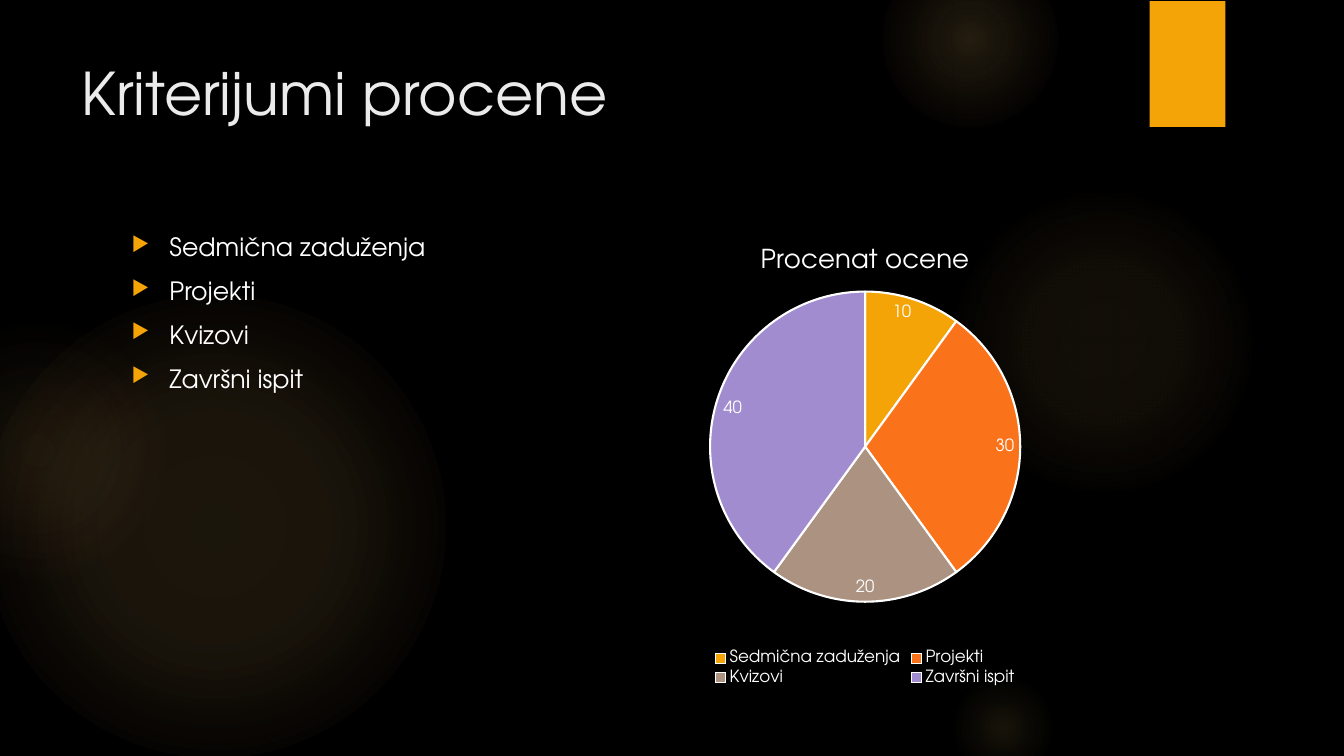
from lxml import etree
from pptx import Presentation
from pptx.chart.data import CategoryChartData
from pptx.dml.color import RGBColor
from pptx.enum.chart import XL_CHART_TYPE, XL_LABEL_POSITION, XL_LEGEND_POSITION
from pptx.enum.shapes import MSO_SHAPE
from pptx.oxml import parse_xml
from pptx.oxml.ns import nsdecls, qn
from pptx.util import Pt

PX = 9525  # 96 px to the inch
FONT = "TeX Gyre Adventor"
BLACK = RGBColor(0x00, 0x00, 0x00)
WHITE = RGBColor(0xFF, 0xFF, 0xFF)
PALE = RGBColor(0xEB, 0xEB, 0xEB)
AMBER = RGBColor(0xF5, 0xA4, 0x08)
ORANGE = RGBColor(0xFA, 0x73, 0x1A)
TAUPE = RGBColor(0xAB, 0x92, 0x81)
VIOLET = RGBColor(0xA1, 0x8C, 0xD0)
GLOW = RGBColor(0xFA, 0xC9, 0x6A)
GLOW_PINK = RGBColor(0xF5, 0x9B, 0x74)


def style(font, size, color=WHITE):
    font.name = FONT
    font.size = Pt(size)
    font.bold = False
    font.color.rgb = color


def add_text_frame(left, top, width, height):
    frame = slide.shapes.add_textbox(left * PX, top * PX, width * PX, height * PX).text_frame
    frame.word_wrap = True
    return frame


prs = Presentation()
prs.slide_width, prs.slide_height = 1280 * PX, 720 * PX
slide = prs.slides.add_slide(prs.slide_layouts[6])
slide.background.fill.solid()
slide.background.fill.fore_color.rgb = BLACK

# Soft glows: left, top, diameter, then (position %, colour, opacity %) from the centre out
glows = [
    (-16, 281, 440, [(0, GLOW, 11), (36, GLOW, 10), (75, GLOW, 0)]),
    (-88, 305, 248, [(0, GLOW, 8), (36, GLOW, 5), (71, GLOW_PINK, 0)]),
    (903, 178, 296, [(0, GLOW, 7), (36, GLOW, 6), (69, GLOW, 0)]),
    (840, -47, 168, [(0, GLOW, 14), (36, GLOW, 7), (73, GLOW, 0)]),
    (903, 641, 104, [(0, GLOW, 10), (31, GLOW, 5), (66, GLOW, 0)]),
]
for left, top, diameter, stops in glows:
    glow = slide.shapes.add_shape(
        MSO_SHAPE.OVAL, left * PX, top * PX, diameter * PX, diameter * PX)
    glow.shadow.inherit = False
    glow.line.fill.background()
    stop_xml = "".join(
        f'<a:gs pos="{pos * 1000}"><a:srgbClr val="{color}">'
        f'<a:alpha val="{opacity * 1000}"/></a:srgbClr></a:gs>'
        for pos, color, opacity in stops)
    gradient = parse_xml(
        f'<a:gradFill {nsdecls("a")} rotWithShape="1"><a:gsLst>{stop_xml}</a:gsLst>'
        '<a:path path="circle"><a:fillToRect l="50000" t="50000" r="50000" b="50000"/>'
        '</a:path></a:gradFill>')
    glow.element.spPr.find(qn("a:prstGeom")).addnext(gradient)

ribbon = slide.shapes.add_shape(MSO_SHAPE.RECTANGLE, 1095 * PX, 1 * PX, 72 * PX, 120 * PX)
ribbon.shadow.inherit = False
ribbon.fill.solid()
ribbon.fill.fore_color.rgb = AMBER
ribbon.line.fill.background()

title = add_text_frame(68, 49, 988, 147).paragraphs[0]
title.text = "Kriterijumi procene"
style(title.font, 42, PALE)

# Criteria: name, share of the grade, slice colour
criteria = [
    ("Sedmična zaduženja", 10, AMBER),
    ("Projekti", 30, ORANGE),
    ("Kvizovi", 20, TAUPE),
    ("Završni ispit", 40, VIOLET),
]
criteria_list = add_text_frame(116, 216, 462, 441)
for i, (name, _, _) in enumerate(criteria):
    item = criteria_list.add_paragraph() if i else criteria_list.paragraphs[0]
    item.text = name
    props = item._p.get_or_add_pPr()
    props.set("marL", str(36 * PX))
    props.set("indent", str(-36 * PX))
    bullet_color = etree.SubElement(props, qn("a:buClr"))
    etree.SubElement(bullet_color, qn("a:srgbClr"), val=str(AMBER))
    etree.SubElement(props, qn("a:buSzPct"), val="80000")
    etree.SubElement(props, qn("a:buChar"), char="▶")
    style(item.font, 18)
    item.space_after = Pt(6)
    if i:
        item.space_before = Pt(3.6)

grades = CategoryChartData()
grades.categories = [name for name, _, _ in criteria]
grades.add_series("Procenat ocene", [share for _, share, _ in criteria])
chart = slide.shapes.add_chart(
    XL_CHART_TYPE.PIE, 593 * PX, 216 * PX, 462 * PX, 441 * PX, grades).chart
style(chart.font, 10)

chart.has_title = True
chart_title = chart.chart_title.text_frame.paragraphs[0]
chart_title.text = "Procenat ocene"
style(chart_title.font, 18.6)
chart.chart_title.include_in_layout = False

chart.has_legend = True
chart.legend.position = XL_LEGEND_POSITION.BOTTOM
chart.legend.include_in_layout = False
style(chart.legend.font, 12)

pie = chart.plots[0]
pie.vary_by_categories = True
for i, (_, _, color) in enumerate(criteria):
    piece = pie.series[0].points[i].format
    piece.fill.solid()
    piece.fill.fore_color.rgb = color
    piece.line.color.rgb = WHITE
    piece.line.width = Pt(1.5)

labels = pie.series[0].data_labels
labels.show_value = True
labels.position = XL_LABEL_POSITION.INSIDE_END
style(labels.font, 12)

plot_area = chart.element.find(".//" + qn("c:plotArea"))
for old_layout in plot_area.findall(qn("c:layout")):
    plot_area.remove(old_layout)
plot_area.insert(0, parse_xml(
    f'<c:layout {nsdecls("c")}><c:manualLayout><c:layoutTarget val="inner"/>'
    '<c:xMode val="edge"/><c:yMode val="edge"/><c:x val="0.18"/><c:y val="0.14"/>'
    '<c:w val="0.64"/><c:h val="0.67"/></c:manualLayout></c:layout>'))

prs.save("out.pptx")
